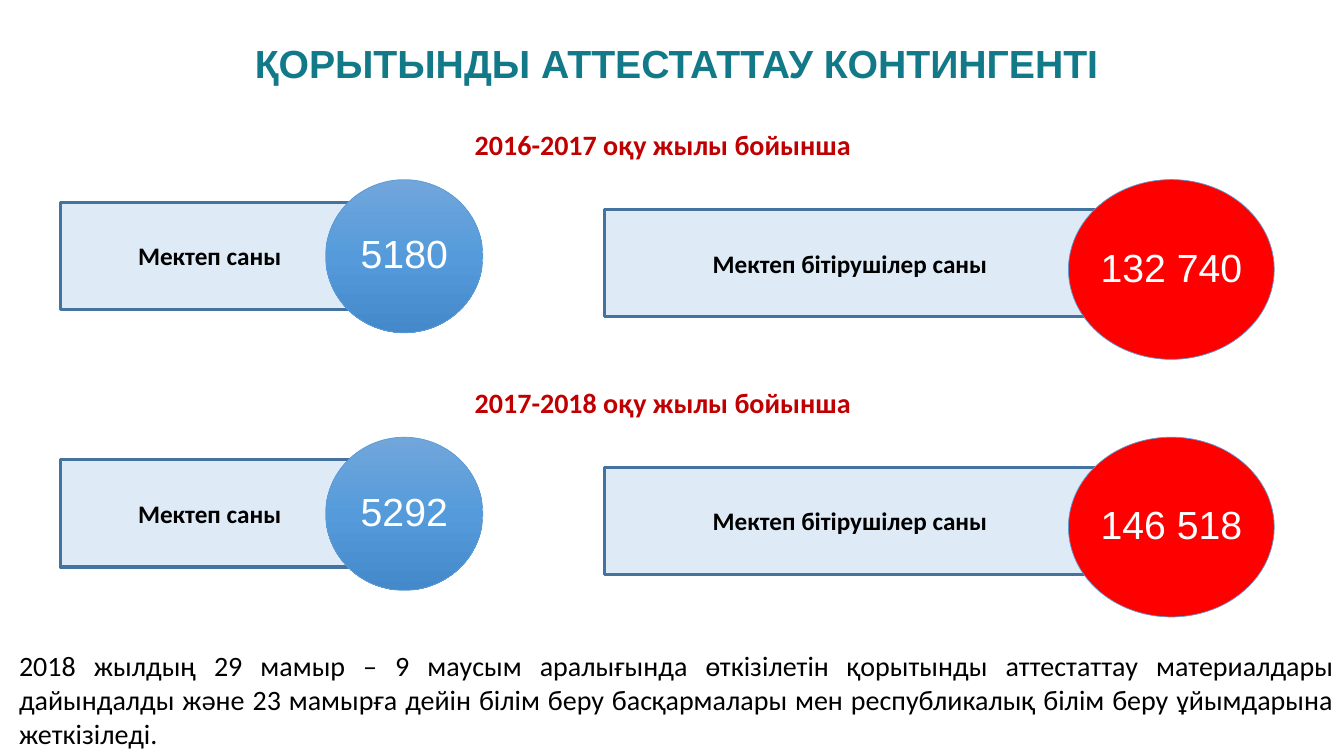
from copy import deepcopy

from pptx import Presentation
from pptx.dml.color import RGBColor
from pptx.enum import shapes, text
from pptx.util import Pt

TEAL = RGBColor(0x12, 0x79, 0x89)
DARK_RED = RGBColor(0xC0, 0x00, 0x00)
RED = RGBColor(0xFF, 0x00, 0x00)
PALE_BLUE = RGBColor(0xDE, 0xEB, 0xF7)
BORDER_BLUE = RGBColor(0x43, 0x73, 0x9E)
BLUE = RGBColor(0x5B, 0x9B, 0xD5)
GRADIENT = (RGBColor(0x71, 0xA6, 0xDB), RGBColor(0x55, 0x9B, 0xDB), RGBColor(0x44, 0x8A, 0xCA))
BLACK = RGBColor(0x00, 0x00, 0x00)
WHITE = RGBColor(0xFF, 0xFF, 0xFF)

YEARS = [
    ("2016-2017 оқу жылы бойынша", "5180", "132 740"),
    ("2017-2018 оқу жылы бойынша", "5292", "146 518"),
]
NOTE = (
    "2018 жылдың 29 мамыр – 9 маусым аралығында өткізілетін қорытынды аттестаттау "
    "материалдары дайындалды және 23 мамырға дейін білім беру басқармалары мен "
    "республикалық білім беру ұйымдарына жеткізіледі."
)


def write(sp, words, size, color, font="Calibri", bold=False, align=text.PP_ALIGN.CENTER):
    """Write one formatted paragraph into a shape."""
    p = sp.text_frame.paragraphs[0]
    p.alignment = align
    r = p.add_run()
    r.text = words
    r.font.size, r.font.name, r.font.bold = Pt(size), font, bold
    r.font.color.rgb = color
    return p


def add_title(s, left, top, width, height):
    """Place the slide title."""
    sp = s.shapes.title
    sp.left, sp.top, sp.width, sp.height = Pt(left), Pt(top), Pt(width), Pt(height)
    sp.text_frame.auto_size = text.MSO_AUTO_SIZE.NONE
    sp.text_frame.vertical_anchor = text.MSO_ANCHOR.MIDDLE
    p = write(sp, "ҚОРЫТЫНДЫ АТТЕСТАТТАУ КОНТИНГЕНТІ", 28, TEAL, "Arial", True)
    p.line_spacing = 0.9


def add_text(s, left, top, width, height, words, color, bold, align):
    """Place a wrapped 20 pt text box."""
    sp = s.shapes.add_textbox(Pt(left), Pt(top), Pt(width), Pt(height))
    sp.text_frame.word_wrap = True
    write(sp, words, 20, color, bold=bold, align=align)


def add_outlined(s, kind, left, top, width, height, line, weight):
    """Place a shadowless preset shape with an outline."""
    sp = s.shapes.add_shape(kind, Pt(left), Pt(top), Pt(width), Pt(height))
    sp.shadow.inherit = False
    sp.line.color.rgb, sp.line.width = line, Pt(weight)
    sp.text_frame.vertical_anchor = text.MSO_ANCHOR.MIDDLE
    return sp


def add_label(s, left, top, width, words, align, indent=7.2):
    """Place a pale label bar."""
    sp = add_outlined(s, shapes.MSO_SHAPE.RECTANGLE, left, top, width, 76.5, BORDER_BLUE, 2.25)
    sp.fill.solid()
    sp.fill.fore_color.rgb = PALE_BLUE
    sp.text_frame.margin_left = Pt(indent)
    write(sp, words, 18, BLACK, bold=True, align=align)


def add_figure(s, left, top, width, height, number):
    """Place an ellipse holding a number."""
    sp = add_outlined(s, shapes.MSO_SHAPE.OVAL, left, top, width, height, BLUE, 0.5)
    sp.text_frame.word_wrap = False
    write(sp, number, 28, WHITE, "Arial").line_spacing = 0.9
    return sp


def fill_gradient(sp):
    """Fill a shape with the vertical blue gradient."""
    sp.fill.gradient()
    sp.fill.gradient_angle = 270
    first = sp._element.spPr.xpath(".//a:gs")[0]
    first.addnext(deepcopy(first))
    for stop, color, position in zip(sp.fill.gradient_stops, GRADIENT, (0, 0.5, 1)):
        stop.color.rgb = color
        stop.position = position


def add_year(s, left, top, width, heading, schools, graduates):
    """Place one school year: heading, schools and graduates."""
    add_text(s, left + 275.8, top, 309, 31.7, heading, DARK_RED, True, text.PP_ALIGN.CENTER)
    add_label(s, left, top + 56.7, 245.5, "Мектеп саны", text.PP_ALIGN.LEFT, 55.4)
    fill_gradient(add_figure(s, left + 189.4, top + 40.5, 112.3, 109.4, schools))
    add_label(s, left + 388.5, top + 62, 351, "Мектеп бітірушілер саны", text.PP_ALIGN.CENTER)
    red = add_figure(s, left + width - 147, top + 40.5, 147, 128.4, graduates)
    red.fill.solid()
    red.fill.fore_color.rgb = RED


def main():
    """Build and save the slide."""
    prs = Presentation()
    prs.slide_width, prs.slide_height = Pt(960), Pt(540)
    s = prs.slides.add_slide(prs.slide_layouts[5])
    add_title(s, 117.4, 28, 731.5, 38.2)
    for i, year in enumerate(YEARS):
        add_year(s, 43.2, 87.8 + 184 * i, 867, *year)
    add_text(s, 6.5, 460, 953.5, 80, NOTE, BLACK, False, text.PP_ALIGN.JUSTIFY)
    prs.save("out.pptx")


if __name__ == "__main__":
    main()
